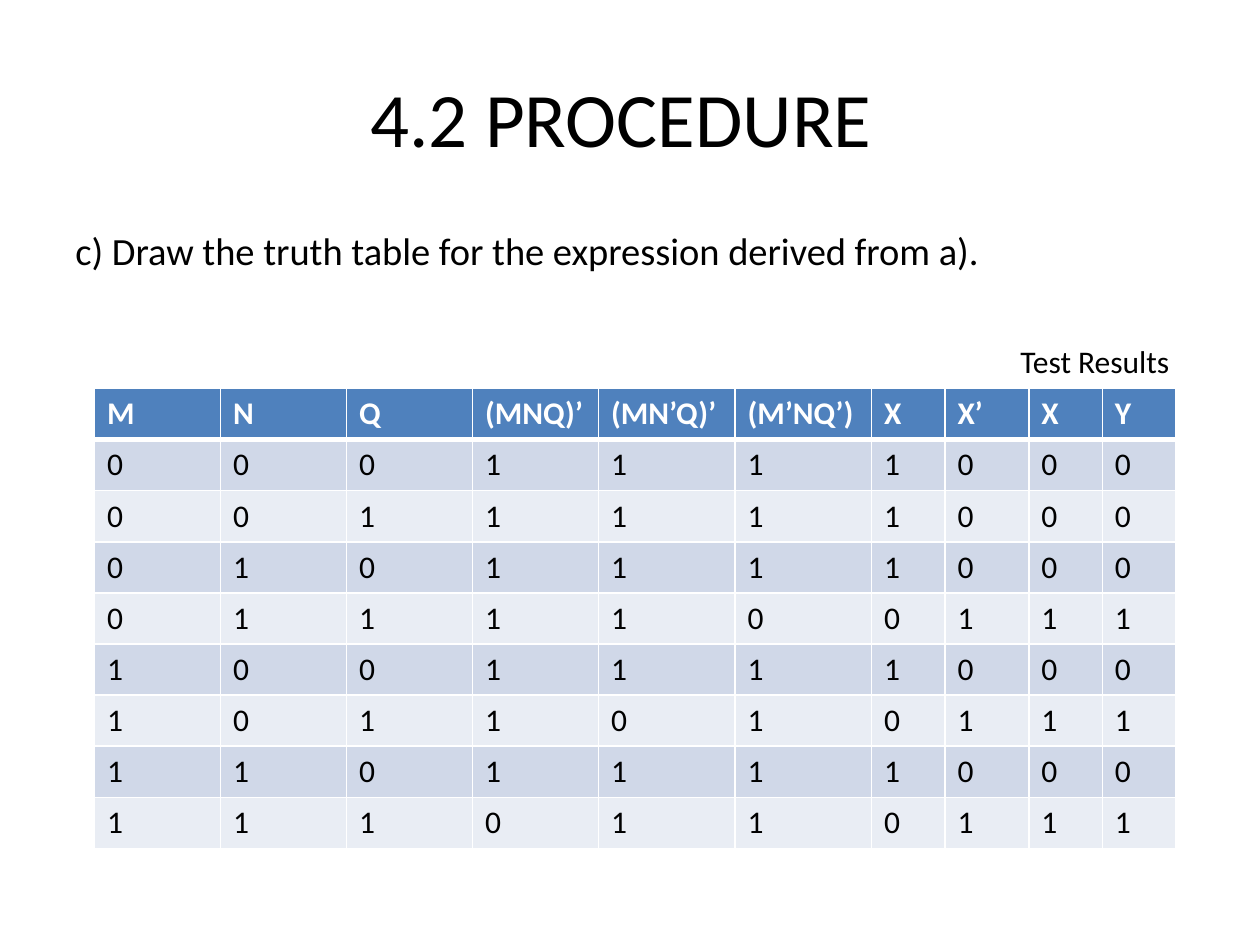
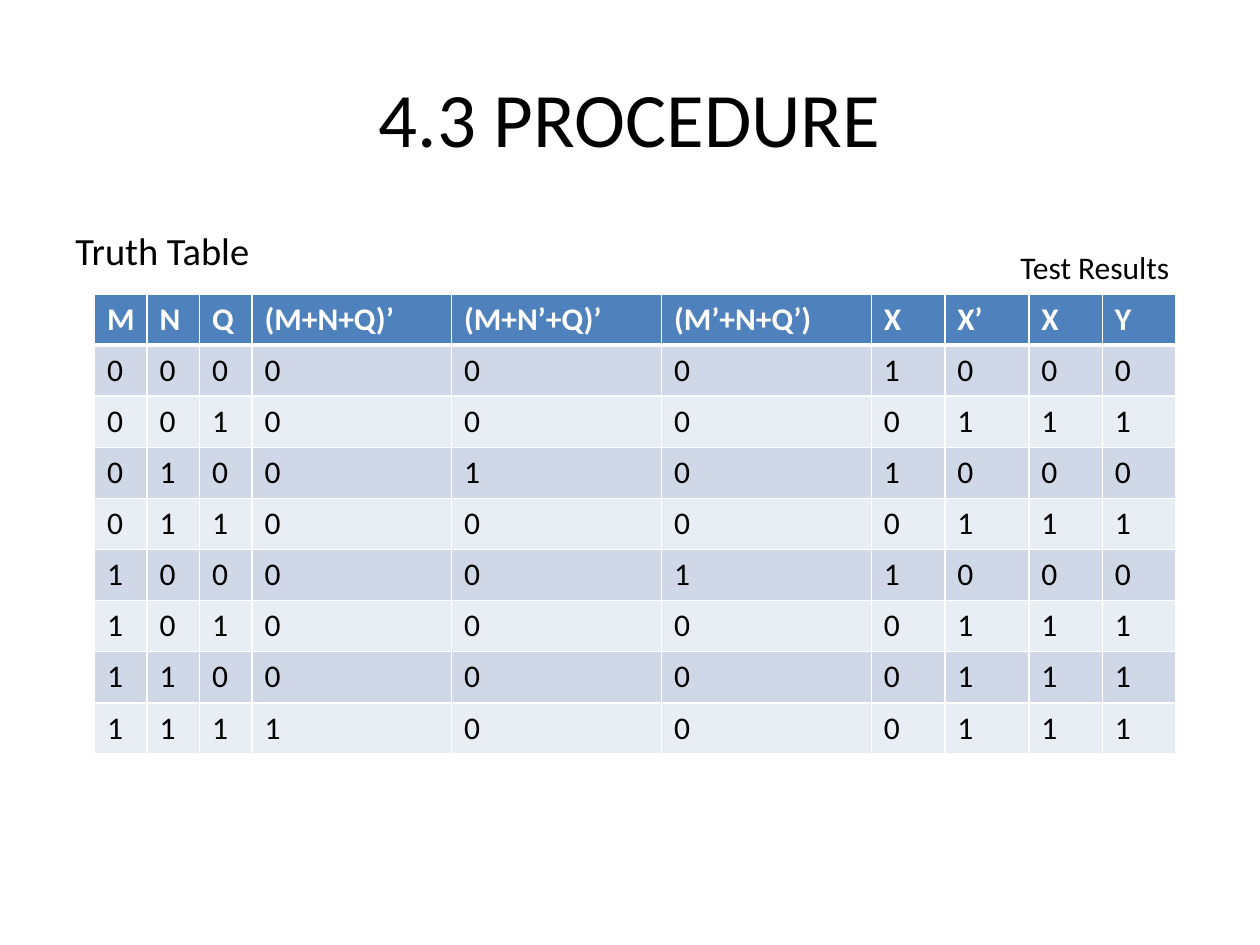
from pptx import Presentation
from pptx.dml.color import RGBColor
from pptx.enum.text import MSO_ANCHOR as Anchor, PP_ALIGN as Align
from pptx.oxml.ns import qn
from pptx.util import Pt
from lxml.etree import SubElement

BLACK = RGBColor(0x00, 0x00, 0x00)
WHITE = RGBColor(0xFF, 0xFF, 0xFF)
HEADER_BLUE = RGBColor(0x4F, 0x81, 0xBD)
BAND_DARK = RGBColor(0xD0, 0xD8, 0xE8)
BAND_LIGHT = RGBColor(0xE9, 0xED, 0xF4)

FONT = "Calibri"
BODY_SIZE = 22
TABLE_SIZE = 18
HANGING_INDENT = 27
ROW_HEIGHT = 29.2
CAPTION_RISE = 30

# Boxes are left, top, width, height in points
TITLE_BOX = (36, 21.6, 648, 90)
BODY_BOX = (36, 126, 648, 356.4)
TABLE_LEFT = 54
CAPTION_LEFT, CAPTION_WIDTH, CAPTION_HEIGHT = 576, 100.8, 29

INPUTS = ["M", "N", "Q"]
RESULTS = ["X", "X’", "X", "Y"]
RESULT_WIDTHS = [42, 48, 42, 42]

# Each row of values: inputs, three terms, results
NAND_TABLE = {
    "top": 222,
    "headings": INPUTS + ["(MNQ)’", "(MN’Q)’", "(M’NQ’)"] + RESULTS,
    "widths": [72] * 4 + [78] * 2 + RESULT_WIDTHS,
    "values": [
        "0001111000", "0011111000", "0101111000", "0111100111",
        "1001111000", "1011010111", "1101111000", "1110110111",
    ],
}
NOR_TABLE = {
    "top": 168,
    "headings": INPUTS + ["(M+N+Q)’", "(M+N’+Q)’", "(M’+N+Q’)"] + RESULTS,
    "widths": [30] * 3 + [114] + [120] * 2 + RESULT_WIDTHS,
    "values": [
        "0000001000", "0010000111", "0100101000", "0110000111",
        "1000011000", "1010000111", "1100000111", "1111000111",
    ],
}


def add_run(paragraph, text, size, color=BLACK, bold=False):
    run = paragraph.add_run()
    run.text = text
    run.font.name = FONT
    run.font.size = Pt(size)
    run.font.bold = bold
    run.font.color.rgb = color


def add_text(slide, box, text, size, wrap=True, anchor=Anchor.TOP):
    """Add a one-paragraph text box and return its paragraph."""
    frame = slide.shapes.add_textbox(*map(Pt, box)).text_frame
    frame.word_wrap = wrap
    frame.vertical_anchor = anchor
    paragraph = frame.paragraphs[0]
    add_run(paragraph, text, size)
    return paragraph


def add_title(slide, text):
    paragraph = add_text(slide, TITLE_BOX, text, 44, anchor=Anchor.MIDDLE)
    paragraph.alignment = Align.CENTER


def add_body(slide, text):
    paragraph = add_text(slide, BODY_BOX, text, BODY_SIZE)
    paragraph.space_before = Pt(BODY_SIZE * 0.2)
    properties = paragraph._p.get_or_add_pPr()
    properties.set("marL", str(Pt(HANGING_INDENT)))
    properties.set("indent", str(-Pt(HANGING_INDENT)))


def add_borders(cell, widths):
    """Draw white borders; widths maps an edge (L, R, T, B) to points."""
    properties = cell._tc.get_or_add_tcPr()
    for edge, width in widths.items():
        line = SubElement(properties, qn(f"a:ln{edge}"), w=str(Pt(width)))
        fill = SubElement(line, qn("a:solidFill"))
        SubElement(fill, qn("a:srgbClr"), val=str(WHITE))


def fill_row(cells, texts, color, text_color, bold, borders):
    for cell, text in zip(cells, texts):
        add_borders(cell, borders)
        cell.fill.solid()
        cell.fill.fore_color.rgb = color
        add_run(cell.text_frame.paragraphs[0], text, TABLE_SIZE, text_color, bold)


def add_truth_table(slide, top, headings, widths, values):
    row_count = len(values) + 1
    table = slide.shapes.add_table(
        row_count, len(headings), Pt(TABLE_LEFT), Pt(top),
        Pt(sum(widths)), Pt(ROW_HEIGHT * row_count)).table
    for column, width in zip(table.columns, widths):
        column.width = Pt(width)
    for row in table.rows:
        row.height = Pt(ROW_HEIGHT)

    header, *body = table.rows
    fill_row(header.cells, headings, HEADER_BLUE, WHITE, True,
             {"L": 1, "R": 1, "T": 1, "B": 3})
    for index, (row, digits) in enumerate(zip(body, values)):
        fill_row(row.cells, digits, BAND_LIGHT if index % 2 else BAND_DARK,
                 BLACK, False, {"L": 1, "R": 1, "T": 1 if index else 3, "B": 1})


def add_procedure_slide(presentation, title, body, truth_table):
    slide = presentation.slides.add_slide(presentation.slide_layouts[6])
    add_title(slide, title)
    add_body(slide, body)
    add_truth_table(slide, **truth_table)
    caption_box = (CAPTION_LEFT, truth_table["top"] - CAPTION_RISE,
                   CAPTION_WIDTH, CAPTION_HEIGHT)
    add_text(slide, caption_box, "Test Results", TABLE_SIZE, wrap=False)


def main():
    presentation = Presentation()
    presentation.slide_width = Pt(720)
    presentation.slide_height = Pt(540)
    add_procedure_slide(
        presentation, "4.2 PROCEDURE ",
        "c) Draw the truth table for the expression derived from a).", NAND_TABLE)
    add_procedure_slide(presentation, "4.3 PROCEDURE", "Truth Table", NOR_TABLE)
    presentation.save("out.pptx")


if __name__ == "__main__":
    main()
